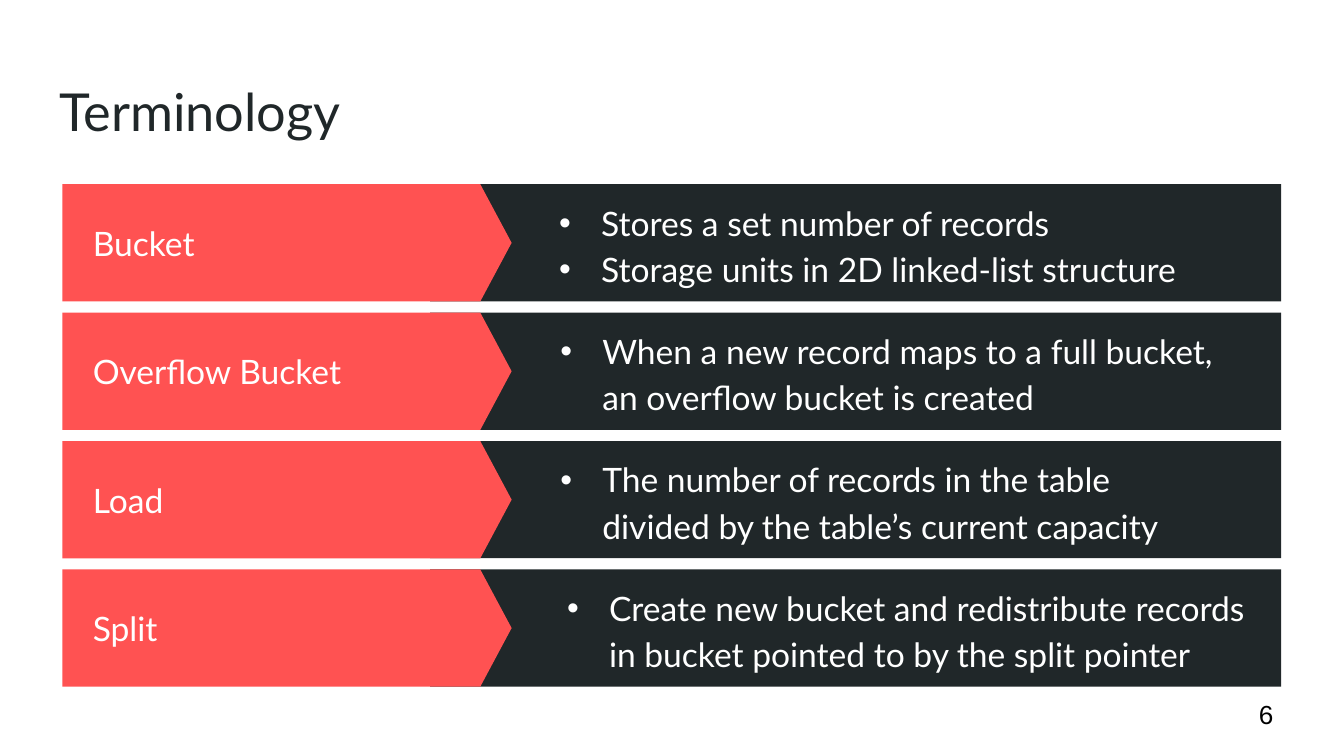
from lxml.etree import SubElement
from pptx import Presentation
from pptx.dml.color import RGBColor
from pptx.enum.shapes import MSO_SHAPE
from pptx.enum.text import MSO_ANCHOR, MSO_AUTO_SIZE, PP_ALIGN
from pptx.oxml.ns import qn
from pptx.util import Pt

DARK, CORAL, WHITE, BLACK = "202729", "FF5252", "FFFFFF", "000000"
ROW_TOP, ROW_HEIGHT, ROW_PITCH = 98.7, 62.8, 68.8

# Term, definition lines, definition left, definition width, text indent
ROWS = [
    ("Bucket",
     ["Stores a set number of records", "Storage units in 2D linked-list structure"],
     274.3, 402.5, 40.5),
    ("Overflow Bucket",
     ["When a new record maps to a full bucket, an overflow bucket is created"],
     257, 402.5, 58.5),
    ("Load",
     ["The number of records in the table divided by the table’s current capacity"],
     257, 402.5, 58.5),
    ("Split",
     ["Create new bucket and redistribute records in bucket pointed to by the split pointer"],
     260.6, 415.5, 58.5),
]


def color(value):
    return RGBColor.from_string(value)


def place(shape, left, top, width, height):
    shape.left, shape.top = Pt(left), Pt(top)
    shape.width, shape.height = Pt(width), Pt(height)


def write(shape, lines, size, ink, font="Lato", anchor=MSO_ANCHOR.MIDDLE):
    frame = shape.text_frame
    frame.text = "\n".join(lines)
    frame.word_wrap = True
    frame.auto_size = MSO_AUTO_SIZE.NONE
    frame.vertical_anchor = anchor
    frame.margin_left = frame.margin_right = Pt(7.2)
    frame.margin_top = frame.margin_bottom = Pt(7.2)
    for para in frame.paragraphs:
        para.alignment = PP_ALIGN.LEFT
        para.space_before = Pt(0)
        for span in para.runs:
            span.font.name = font
            span.font.size = Pt(size)
            span.font.bold = False
            span.font.color.rgb = color(ink)


def add_label(page, bounds, text, size, ink, font="Lato"):
    box = page.shapes.add_textbox(*map(Pt, bounds))
    write(box, [text], size, ink, font)


def add_bullets(shape, indent, ink):
    for para in shape.text_frame.paragraphs:
        para.line_spacing = 1.15
        properties = para._p.get_or_add_pPr()
        properties.set("marL", str(Pt(indent)))
        properties.set("indent", str(-Pt(22.5)))
        bullet_color = SubElement(properties, qn("a:buClr"))
        SubElement(bullet_color, qn("a:srgbClr")).set("val", ink)
        SubElement(properties, qn("a:buFont")).set("typeface", "Arial")
        SubElement(properties, qn("a:buChar")).set("char", "•")


def add_bar(group, kind, left, top, width, fill):
    bar = group.shapes.add_shape(kind, Pt(left), Pt(top), Pt(width), Pt(ROW_HEIGHT))
    bar.shadow.inherit = False
    bar.fill.solid()
    bar.fill.fore_color.rgb = color(fill)
    bar.line.fill.background()
    return bar


def add_row(page, body, top, term, lines, left, width, indent):
    # Dark bar with the coral arrow over its left end
    group = page.shapes.add_group_shape()
    add_bar(group, MSO_SHAPE.RECTANGLE, 230.4, top, 456, DARK)
    arrow = add_bar(group, MSO_SHAPE.PENTAGON, 33.4, top, 240.7, CORAL)
    arrow.adjustments[0] = 0.267

    # Term, then the definition brought in front of its bar
    add_label(page, (42.6, top, 190.8, ROW_HEIGHT), term, 18, WHITE)
    place(body, left, top, width, ROW_HEIGHT)
    write(body, lines, 18, WHITE)
    add_bullets(body, indent, WHITE)
    group.element.addnext(body.element)


def main():
    deck = Presentation()
    deck.slide_width, deck.slide_height = Pt(720), Pt(405)
    # The comparison layout offers a title and four body placeholders
    page = deck.slides.add_slide(deck.slide_layouts[4])

    # Title
    title = page.shapes.title
    place(title, 24.5, 35.4, 671, 45.4)
    write(title, ["Terminology"], 28, DARK, anchor=MSO_ANCHOR.TOP)

    # Terms and definitions
    bodies = list(page.placeholders)[1:]
    for index, (body, row) in enumerate(zip(bodies, ROWS)):
        add_row(page, body, ROW_TOP + index * ROW_PITCH, *row)

    # Page number
    add_label(page, (667.4, 367.2, 43.2, 31), "6", 14, BLACK, "Arial")

    deck.save("out.pptx")


if __name__ == "__main__":
    main()
